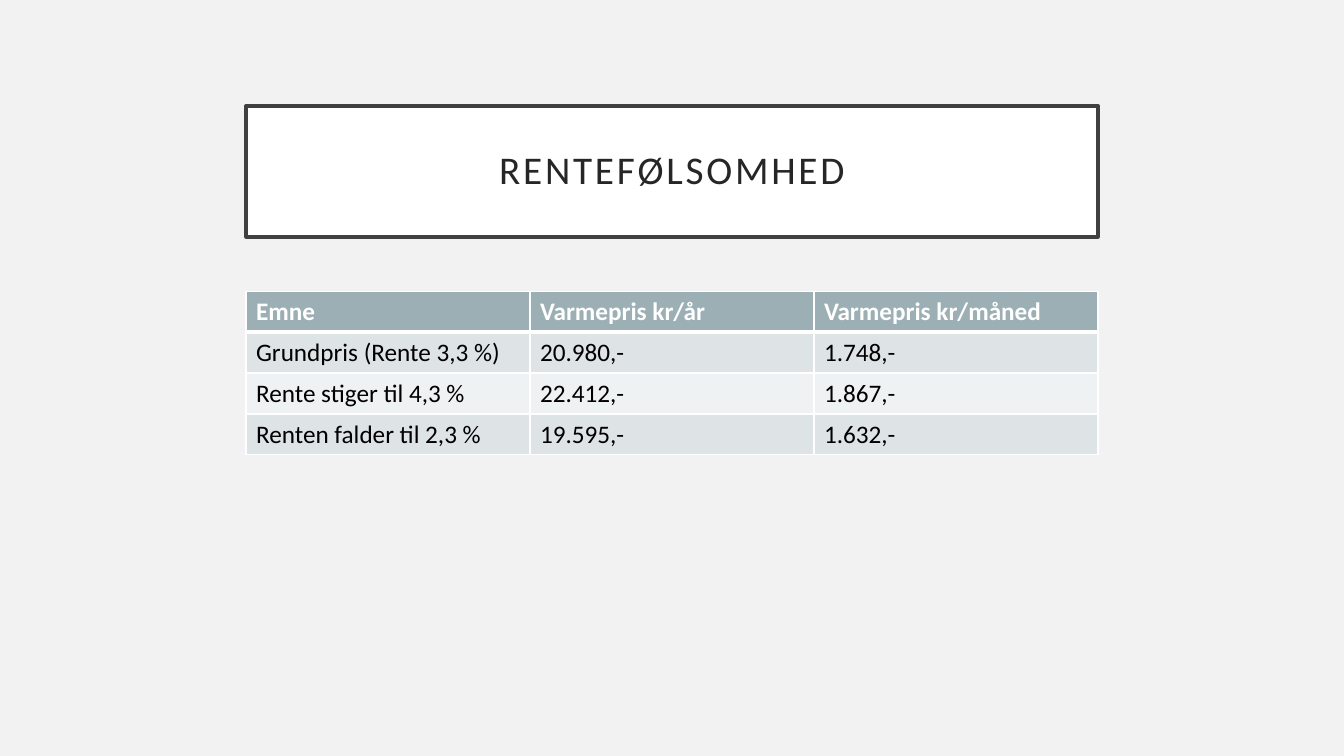
from pptx import Presentation
from pptx.dml.color import RGBColor
from pptx.enum.shapes import MSO_SHAPE
from pptx.enum.text import MSO_ANCHOR, PP_ALIGN
from pptx.oxml import parse_xml
from pptx.oxml.ns import nsdecls
from pptx.util import Inches, Pt

PAPER = RGBColor(0xF2, 0xF2, 0xF2)
WHITE = RGBColor(0xFF, 0xFF, 0xFF)
BLACK = RGBColor(0, 0, 0)
FRAME = RGBColor(0x40, 0x40, 0x40)
INK = RGBColor(0x26, 0x26, 0x26)
HEAD = RGBColor(0x9B, 0xAF, 0xB5)
BANDS = [RGBColor(0xEF, 0xF2, 0xF3), RGBColor(0xDE, 0xE3, 0xE5)]
FONT = "Calibri"

ROWS = [
    ("Emne", "Varmepris kr/år", "Varmepris kr/måned"),
    ("Grundpris (Rente 3,3 %)", "20.980,-", "1.748,-"),
    ("Rente stiger til 4,3 %", "22.412,-", "1.867,-"),
    ("Renten falder til 2,3 %", "19.595,-", "1.632,-"),
]


def style(run, size, color, bold=False):
    font = run.font
    font.name, font.size, font.bold = FONT, Pt(size), bold
    font.color.rgb = color


def add_title(slide, text, left, top, width, height):
    box = slide.shapes.add_shape(MSO_SHAPE.RECTANGLE, Inches(left), Inches(top),
                                 Inches(width), Inches(height))
    box.shadow.inherit = False
    box.fill.solid()
    box.fill.fore_color.rgb = WHITE
    box.line.color.rgb = FRAME
    box.line.width = Pt(2.5)
    frame = box.text_frame
    frame.word_wrap = True
    frame.vertical_anchor = MSO_ANCHOR.MIDDLE
    frame.margin_left = frame.margin_right = Inches(0.2)
    frame.margin_top = frame.margin_bottom = Inches(0.2)
    frame.text = text
    para = frame.paragraphs[0]
    para.alignment = PP_ALIGN.CENTER
    para.line_spacing = 0.9
    run = para.runs[0]
    style(run, 28, INK)
    run.font._element.set("spc", "200")


def add_edges(cell, widths):
    """Draw white borders, with widths in points by side."""
    props = cell._tc.get_or_add_tcPr()
    for side in "LRTB":
        props.append(parse_xml(
            f'<a:ln{side} {nsdecls("a")} w="{Pt(widths.get(side, 1))}">'
            f'<a:solidFill><a:srgbClr val="{WHITE}"/></a:solidFill></a:ln{side}>'))


def add_prices(slide, rows, left, top, width, height):
    table = slide.shapes.add_table(len(rows), len(rows[0]), Inches(left), Inches(top),
                                   Inches(width), Inches(height)).table
    for r, row in enumerate(rows):
        for c, text in enumerate(row):
            cell = table.cell(r, c)
            add_edges(cell, {0: {"B": 3}, 1: {"T": 3}}.get(r, {}))
            cell.fill.solid()
            cell.fill.fore_color.rgb = BANDS[r % 2] if r else HEAD
            cell.text_frame.text = text
            style(cell.text_frame.paragraphs[0].runs[0], 18,
                  BLACK if r else WHITE, bold=r == 0)


def main():
    deck = Presentation()
    deck.slide_width, deck.slide_height = Inches(13.33), Inches(7.5)
    slide = deck.slides.add_slide(deck.slide_layouts[6])
    slide.background.fill.solid()
    slide.background.fill.fore_color.rgb = PAPER
    left, width = 2.44, 8.45
    add_title(slide, "RENTEFØLSOMHED", left, 1.05, width, 1.3)
    add_prices(slide, ROWS, left, 2.89, width, 1.62)
    deck.save("out.pptx")


if __name__ == "__main__":
    main()
